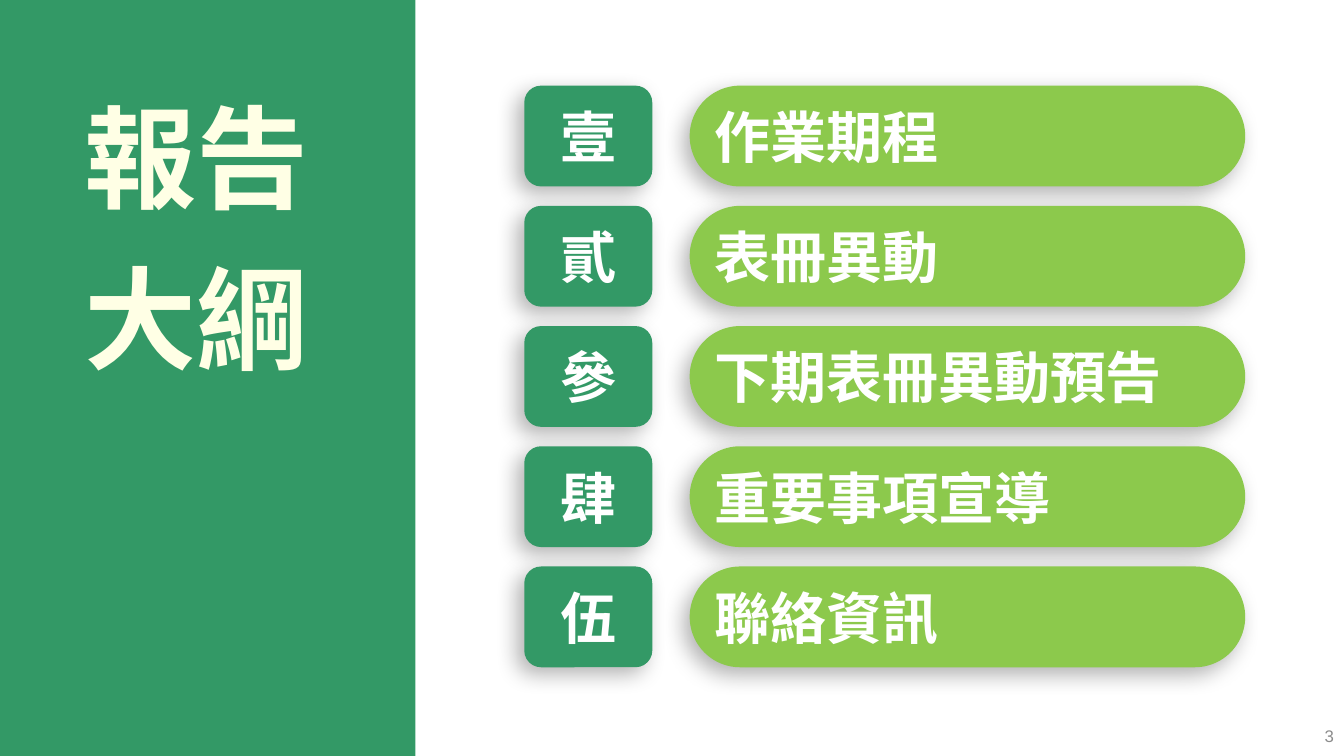
from lxml.etree import SubElement
from pptx import Presentation
from pptx.dml.color import RGBColor
from pptx.enum.shapes import MSO_SHAPE as Shape
from pptx.enum.text import MSO_ANCHOR as Anchor, MSO_AUTO_SIZE as Fit, PP_ALIGN as Align
from pptx.oxml.ns import qn
from pptx.util import Inches, Pt

TITLE = "報告大綱"
PAGE = "3"
TOPICS = [
    ("壹", "作業期程"),
    ("貳", "表冊異動"),
    ("參", "下期表冊異動預告"),
    ("肆", "重要事項宣導"),
    ("伍", "聯絡資訊"),
]
COLORS = {
    "green": "339966",
    "lime": "8CC94C",
    "white": "FFFFFF",
    "cream": "FFFFE5",
    "gray": "8C8C8C",
    "black": "000000",
}
CJK = "Noto Sans CJK SC"
TOP, STEP, HIGH = 0.85, 1.1925, 1


def rgb(name):
    return RGBColor.from_string(COLORS[name])


def write(frame, text, size, color, align, anchor, font=CJK, bold=True):
    frame.word_wrap = True
    frame.vertical_anchor = anchor
    para = frame.paragraphs[0]
    para.alignment = align
    run = para.add_run()
    run.text = text
    run.font.name = font
    run.font.size = Pt(size)
    run.font.bold = bold
    run.font.color.rgb = rgb(color)
    if font == CJK:
        SubElement(run.font._element, qn("a:ea"), typeface=font)


def add_box(slide, kind, color, *place):
    box = slide.shapes.add_shape(kind, *map(Inches, place))
    box.shadow.inherit = False
    box.fill.solid()
    box.fill.fore_color.rgb = rgb(color)
    box.line.fill.background()
    return box


def add_shadow(box):
    """Cast a soft shadow to the lower left."""
    effects = box._element.spPr.find(qn("a:effectLst"))
    shade = SubElement(effects, qn("a:outerShdw"), blurRad=str(Pt(16)),
                       dist=str(Pt(7)), dir=str(135 * 60000),
                       algn="tr", rotWithShape="0")
    tint = SubElement(shade, qn("a:srgbClr"), val=COLORS["black"])
    SubElement(tint, qn("a:alpha"), val="30000")


def add_topic(slide, top, mark, name):
    tile = add_box(slide, Shape.ROUNDED_RECTANGLE, "green", 5.2, top, 1.27, HIGH)
    pill = add_box(slide, Shape.ROUNDED_RECTANGLE, "lime", 6.84, top, 5.51, HIGH)
    pill.adjustments[0] = 0.5
    for box, text, align in ((tile, mark, Align.CENTER), (pill, name, Align.LEFT)):
        add_shadow(box)
        write(box.text_frame, text, 40, "white", align, Anchor.MIDDLE)


def main():
    deck = Presentation()
    deck.slide_width, deck.slide_height = Inches(13.33), Inches(7.5)
    slide = deck.slides.add_slide(deck.slide_layouts[5])

    panel = add_box(slide, Shape.RECTANGLE, "green", 0, -0.03, 4.12, 7.53)
    title = slide.shapes.title
    title._element.addprevious(panel._element)
    title.left, title.top = Inches(0.74), Inches(0.56)
    title.width, title.height = Inches(2.63), Inches(3.33)
    title.text_frame.auto_size = Fit.NONE
    write(title.text_frame, TITLE, 80, "cream", Align.LEFT, Anchor.TOP)
    title.text_frame.paragraphs[0].line_spacing = 1.2

    for row, (mark, name) in enumerate(TOPICS):
        add_topic(slide, TOP + row * STEP, mark, name)

    page = slide.shapes.add_textbox(*map(Inches, (10.33, 7.1, 3, 0.4)))
    write(page.text_frame, PAGE, 12, "gray", Align.RIGHT, Anchor.MIDDLE, "Arial", False)
    deck.save("out.pptx")


if __name__ == "__main__":
    main()
